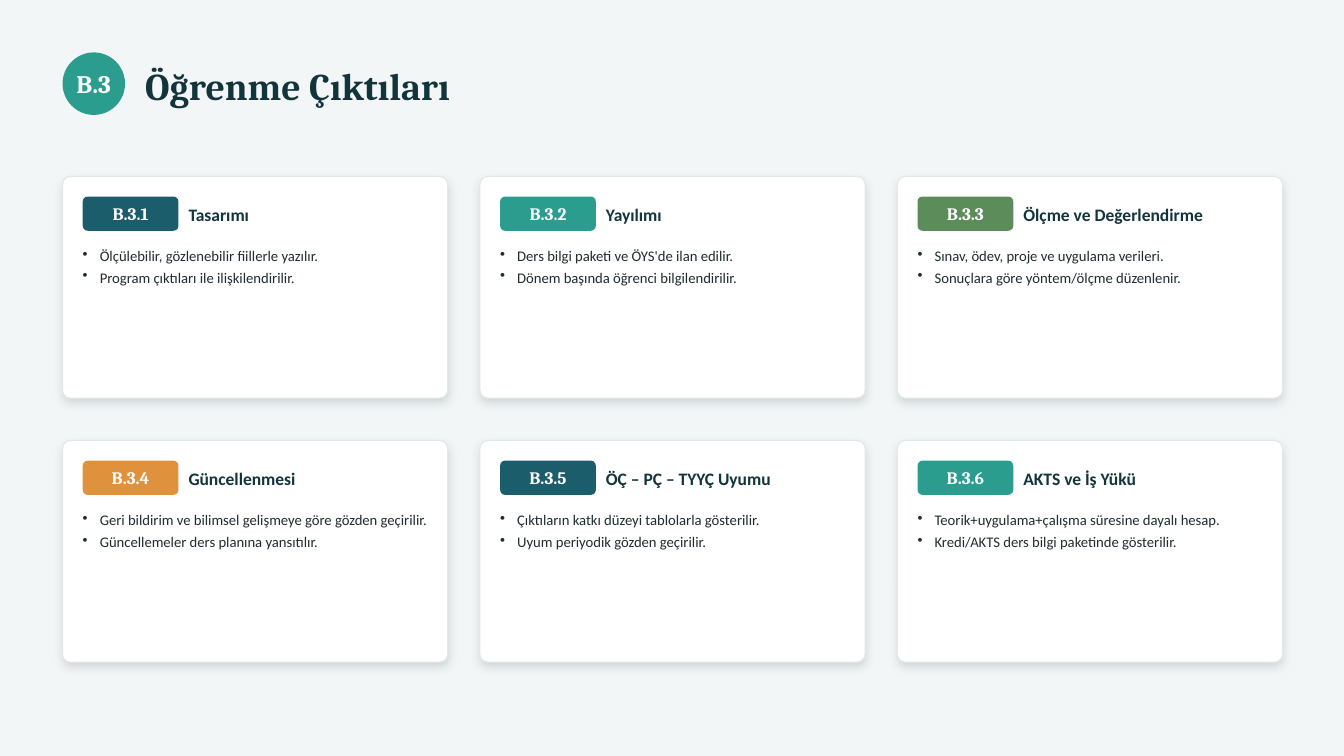
from lxml import etree
from pptx import Presentation
from pptx.dml.color import RGBColor
from pptx.enum.shapes import MSO_SHAPE
from pptx.enum.text import MSO_ANCHOR, MSO_AUTO_SIZE, PP_ALIGN
from pptx.oxml.ns import qn
from pptx.util import Inches, Pt

OVAL = MSO_SHAPE.OVAL
ROUNDED = MSO_SHAPE.ROUNDED_RECTANGLE
TOP = MSO_ANCHOR.TOP
MIDDLE = MSO_ANCHOR.MIDDLE
LEFT = PP_ALIGN.LEFT
CENTER = PP_ALIGN.CENTER
NO_AUTOFIT = MSO_AUTO_SIZE.NONE
TITLE_ONLY = 5

HEADING_FONT = "Cambria"
BODY_FONT = "Calibri"
COLORS = {
    "background": "F3F6F7",
    "card": "FFFFFF",
    "border": "E2E9EA",
    "shadow": "0C2A30",
    "heading": "12343B",
    "body": "1F2C30",
    "white": "FFFFFF",
    "petrol": "1C5D6B",
    "teal": "2A9D8F",
    "green": "5B8C5A",
    "orange": "E0913B",
}

COLUMNS = 3
GRID_LEFT, GRID_TOP = 0.62, 1.75
CARD_WIDTH, CARD_HEIGHT = 3.82, 2.2
COLUMN_GAP, ROW_GAP = 0.32, 0.42
CARD_PADDING = 0.2

CARDS = [
    ("B.3.1", "Tasarımı", "petrol",
     ["Ölçülebilir, gözlenebilir fiillerle yazılır.",
      "Program çıktıları ile ilişkilendirilir."]),
    ("B.3.2", "Yayılımı", "teal",
     ["Ders bilgi paketi ve ÖYS'de ilan edilir.",
      "Dönem başında öğrenci bilgilendirilir."]),
    ("B.3.3", "Ölçme ve Değerlendirme", "green",
     ["Sınav, ödev, proje ve uygulama verileri.",
      "Sonuçlara göre yöntem/ölçme düzenlenir."]),
    ("B.3.4", "Güncellenmesi", "orange",
     ["Geri bildirim ve bilimsel gelişmeye göre gözden geçirilir.",
      "Güncellemeler ders planına yansıtılır."]),
    ("B.3.5", "ÖÇ – PÇ – TYYÇ Uyumu", "petrol",
     ["Çıktıların katkı düzeyi tablolarla gösterilir.",
      "Uyum periyodik gözden geçirilir."]),
    ("B.3.6", "AKTS ve İş Yükü", "teal",
     ["Teorik+uygulama+çalışma süresine dayalı hesap.",
      "Kredi/AKTS ders bilgi paketinde gösterilir."]),
]


def color(name):
    return RGBColor.from_string(COLORS[name])


def prepare_frame(shape, anchor):
    frame = shape.text_frame
    frame.word_wrap = True
    frame.auto_size = NO_AUTOFIT
    frame.vertical_anchor = anchor
    frame.margin_left = frame.margin_right = 0
    frame.margin_top = frame.margin_bottom = 0
    return frame


def add_run(paragraph, text, size, font_name, color_name, bold, align=LEFT):
    paragraph.alignment = align
    run = paragraph.add_run()
    run.text = text
    run.font.size = Pt(size)
    run.font.name = font_name
    run.font.bold = bold
    run.font.color.rgb = color(color_name)


def add_filled_shape(slide, kind, left, top, width, height, fill):
    shape = slide.shapes.add_shape(
        kind, Inches(left), Inches(top), Inches(width), Inches(height))
    shape.shadow.inherit = False
    shape.fill.solid()
    shape.fill.fore_color.rgb = color(fill)
    shape.line.fill.background()
    return shape


def add_badge(slide, kind, left, top, width, height, fill, text, size):
    badge = add_filled_shape(slide, kind, left, top, width, height, fill)
    frame = prepare_frame(badge, MIDDLE)
    add_run(frame.paragraphs[0], text, size, HEADING_FONT, "white", True, CENTER)
    return badge


def add_text_box(slide, left, top, width, height, anchor):
    box = slide.shapes.add_textbox(
        Inches(left), Inches(top), Inches(width), Inches(height))
    return prepare_frame(box, anchor)


def add_soft_shadow(shape):
    effects = shape.element.spPr.find(qn("a:effectLst"))
    shadow = etree.SubElement(
        effects, qn("a:outerShdw"), blurRad=str(Pt(7)), dist=str(Pt(3)),
        dir="5400000", algn="ctr", rotWithShape="0")
    tint = etree.SubElement(shadow, qn("a:srgbClr"), val=COLORS["shadow"])
    etree.SubElement(tint, qn("a:alpha"), val="14000")


def add_bullet(paragraph):
    paragraph.space_after = Pt(3)
    properties = paragraph._p.get_or_add_pPr()
    indent = Inches(0.17)
    properties.set("marL", str(indent))
    properties.set("indent", str(-indent))
    etree.SubElement(properties, qn("a:buChar"), char="•")


def build_header(slide, left, top, width):
    diameter = 0.62
    add_badge(slide, OVAL, left, top + 0.02, diameter, diameter,
              "teal", "B.3", 18)
    title = slide.shapes.title
    offset = diameter + 0.2
    title.left, title.top = Inches(left + offset), Inches(top)
    title.width, title.height = Inches(width - offset), Inches(0.7)
    frame = prepare_frame(title, MIDDLE)
    add_run(frame.paragraphs[0], "Öğrenme Çıktıları", 27,
            HEADING_FONT, "heading", True)


def build_card(slide, left, top, width, height, content):
    code, heading, accent, bullets = content
    card = add_filled_shape(slide, ROUNDED, left, top, width, height, "card")
    card.adjustments[0] = 0.08 / height
    card.line.color.rgb = color("border")
    card.line.width = Pt(0.75)
    add_soft_shadow(card)

    inner_left, inner_top = left + CARD_PADDING, top + CARD_PADDING
    inner_width = width - 2 * CARD_PADDING
    badge_width, badge_height = 0.95, 0.34
    badge = add_badge(slide, ROUNDED, inner_left, inner_top,
                      badge_width, badge_height, accent, code, 12.5)
    badge.adjustments[0] = 0.05 / badge_height

    offset = badge_width + 0.1
    frame = add_text_box(slide, inner_left + offset, inner_top - 0.02,
                         inner_width - offset, 0.4, MIDDLE)
    add_run(frame.paragraphs[0], heading, 12.5, BODY_FONT, "heading", True)

    frame = add_text_box(slide, inner_left, inner_top + 0.5, inner_width,
                         height - 2 * CARD_PADDING - 0.5, TOP)
    for index, text in enumerate(bullets):
        paragraph = frame.add_paragraph() if index else frame.paragraphs[0]
        add_bullet(paragraph)
        add_run(paragraph, text, 10.5, BODY_FONT, "body", False)


def build_card_grid(slide, left, top):
    for index, content in enumerate(CARDS):
        row, column = divmod(index, COLUMNS)
        build_card(slide, left + column * (CARD_WIDTH + COLUMN_GAP),
                   top + row * (CARD_HEIGHT + ROW_GAP),
                   CARD_WIDTH, CARD_HEIGHT, content)


def main():
    presentation = Presentation()
    presentation.slide_width = Inches(13.33)
    presentation.slide_height = Inches(7.5)
    slide = presentation.slides.add_slide(presentation.slide_layouts[TITLE_ONLY])
    slide.background.fill.solid()
    slide.background.fill.fore_color.rgb = color("background")
    build_header(slide, GRID_LEFT, 0.5, 12.09)
    build_card_grid(slide, GRID_LEFT, GRID_TOP)
    presentation.save("out.pptx")


if __name__ == "__main__":
    main()
